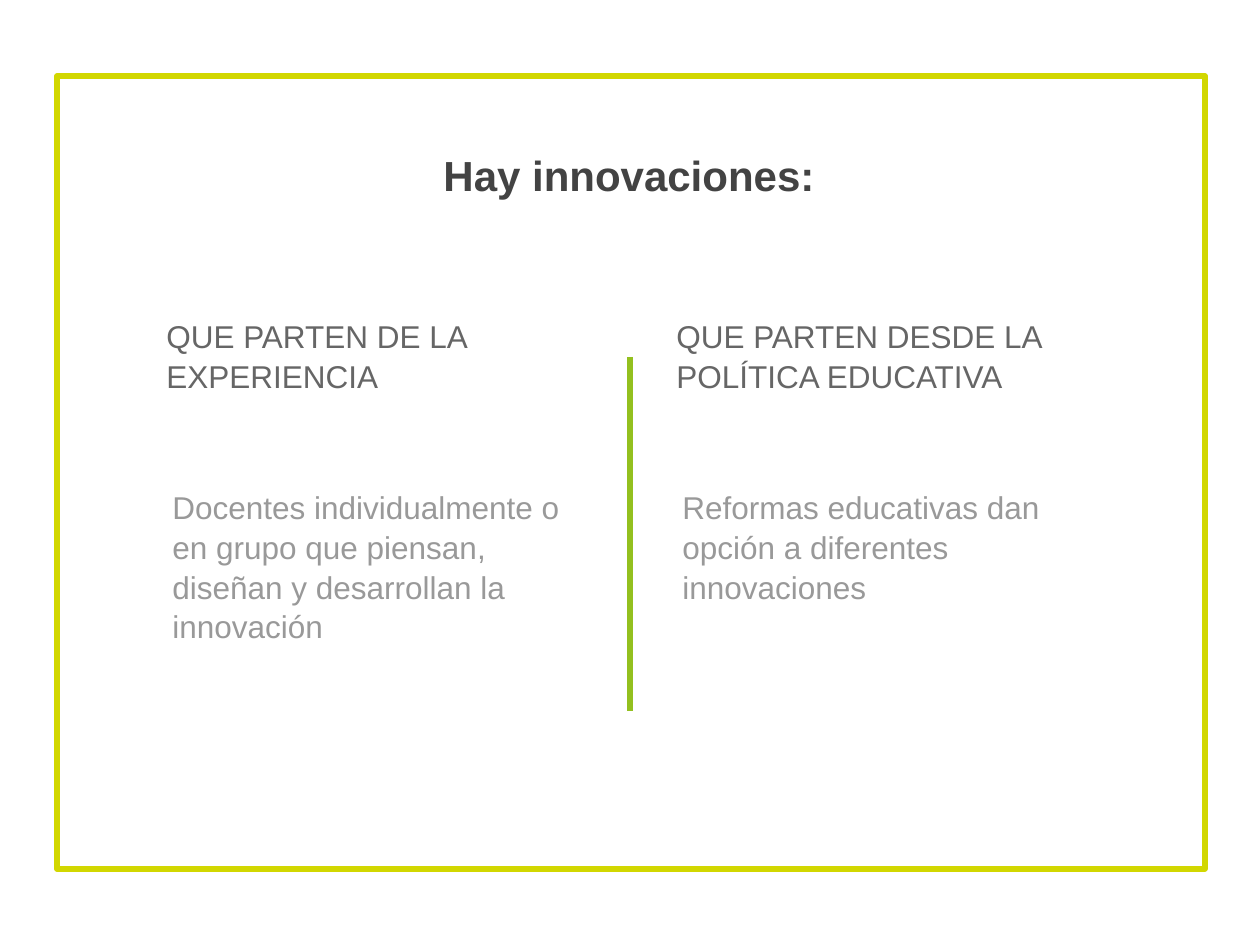
import pptx
import pptx.util
import pptx.dml.color
import pptx.enum.shapes
import pptx.enum.text
from lxml import etree

# Content
TITLE = "Hay innovaciones:"
COLUMNS = [
    ("QUE PARTEN DE LA EXPERIENCIA",
     "Docentes individualmente o en grupo que piensan, diseñan y desarrollan la innovación"),
    ("QUE PARTEN DESDE LA POLÍTICA EDUCATIVA",
     "Reformas educativas dan opción a diferentes innovaciones"),
]

THEME = {
    "font": "Arial", "line_spacing": 1.05, "stroke": 3,
    "frame": "D2D700", "divider": "93C01F",
    "title": ("434343", 24, True),
    "heading": ("666666", 18, False),
    "body": ("999999", 18, False),
}

# Layout in px: left, top, width, height
SCALE = 914400 / 126
FRAME = (57, 76, 1148, 793)
TITLE_BOX = (-1, 134, 1260, 88)
HEADING_BOX = (154, 289, 437, 118)
BODY_BOX = (160, 474, 427, 316)
COLUMN_STEP = 510
DIVIDER = (630, 357, 630, 711)
INSET = pptx.util.Inches(0.1)

ALIGN = pptx.enum.text.PP_ALIGN
ANCHOR = pptx.enum.text.MSO_ANCHOR


def px(values):
    return [pptx.util.Emu(round(v * SCALE)) for v in values]


def rgb(code):
    return pptx.dml.color.RGBColor.from_string(code)


def set_line(sp, color):
    sp.line.color.rgb = rgb(color)
    sp.line.width = pptx.util.Pt(THEME["stroke"])


def add_text(s, text, box, style, align=ALIGN.LEFT, anchor=ANCHOR.TOP):
    color, size, bold = THEME[style]
    tf = s.shapes.add_textbox(*px(box)).text_frame
    tf.word_wrap = True
    tf.vertical_anchor = anchor
    tf.margin_left = tf.margin_right = tf.margin_top = tf.margin_bottom = INSET
    tf.text = text
    p = tf.paragraphs[0]
    p.alignment = align
    p.line_spacing = THEME["line_spacing"]
    font = p.runs[0].font
    font.name, font.size, font.bold = THEME["font"], pptx.util.Pt(size), bold
    font.color.rgb = rgb(color)


prs = pptx.Presentation()
prs.slide_width, prs.slide_height = px((1260, 945))
s = prs.slides.add_slide(prs.slide_layouts[6])

# Frame with rounded line joins
frame = s.shapes.add_shape(pptx.enum.shapes.MSO_SHAPE.RECTANGLE, *px(FRAME))
frame.shadow.inherit = False
frame.fill.background()
set_line(frame, THEME["frame"])
etree.SubElement(frame.line._get_or_add_ln(), pptx.oxml.ns.qn("a:round"))

# Title and columns
add_text(s, TITLE, TITLE_BOX, "title", align=ALIGN.CENTER)
for i, (heading, body) in enumerate(COLUMNS):
    for text, (x, y, w, h), style, anchor in (
            (heading, HEADING_BOX, "heading", ANCHOR.BOTTOM),
            (body, BODY_BOX, "body", ANCHOR.TOP)):
        add_text(s, text, (x + i * COLUMN_STEP, y, w, h), style, anchor=anchor)

# Divider between the columns
divider = s.shapes.add_connector(
    pptx.enum.shapes.MSO_CONNECTOR.STRAIGHT, *px(DIVIDER))
set_line(divider, THEME["divider"])
etree.SubElement(divider._element.spPr, pptx.oxml.ns.qn("a:effectLst"))

prs.save("out.pptx")
